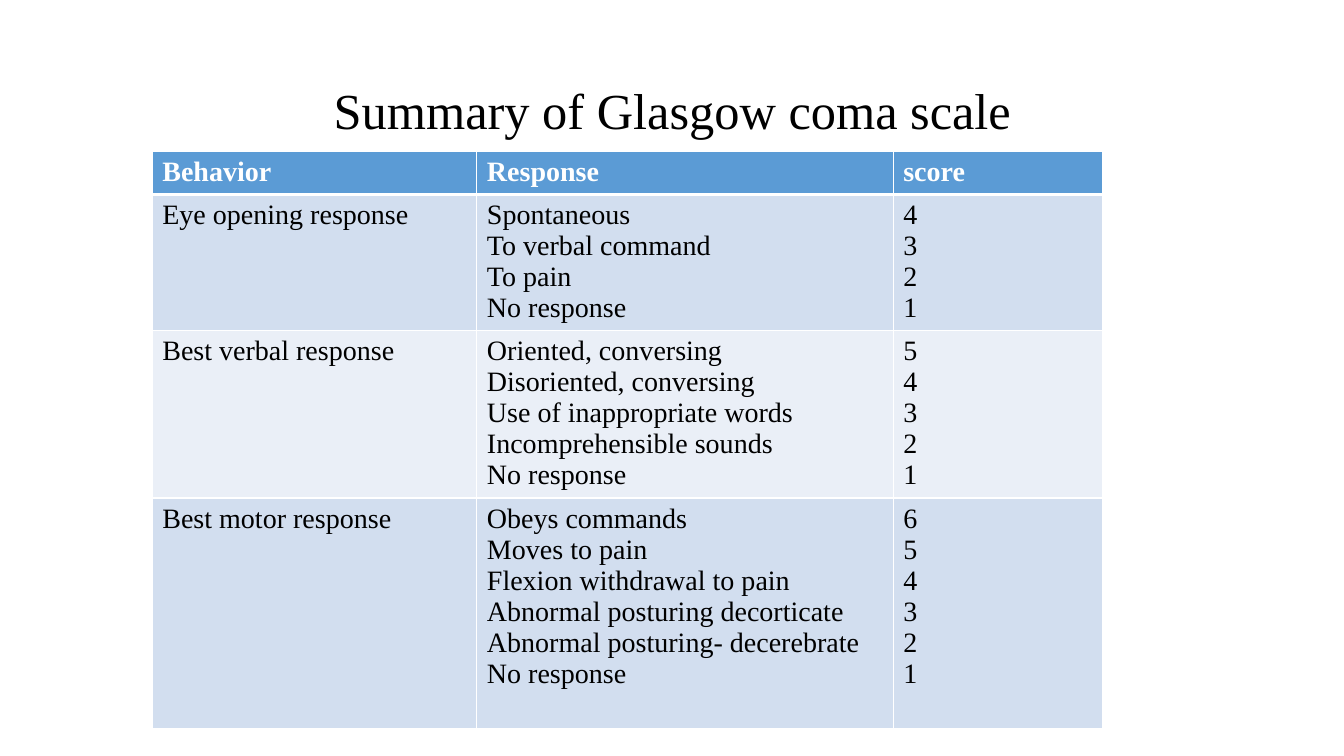
from lxml import etree
from pptx import Presentation
from pptx.dml.color import RGBColor
from pptx.enum.text import MSO_ANCHOR, PP_ALIGN
from pptx.oxml.ns import qn
from pptx.util import Inches, Pt

MIDDLE, CENTER = MSO_ANCHOR.MIDDLE, PP_ALIGN.CENTER
FONT = "Times New Roman"
COLORS = {"header": "5B9BD5", "band_dark": "D2DEEF", "band_light": "EAEFF7",
          "white": "FFFFFF", "black": "000000"}

HEADINGS = ["Behavior", "Response", "score"]
# Responses run from the best to the worst, which scores 1.
SCALE = {
    "Eye opening response": [
        "Spontaneous", "To verbal command", "To pain", "No response"],
    "Best verbal response": [
        "Oriented, conversing", "Disoriented, conversing",
        "Use of inappropriate words", "Incomprehensible sounds", "No response"],
    "Best motor response": [
        "Obeys commands", "Moves to pain", "Flexion withdrawal to pain",
        "Abnormal posturing decorticate", "Abnormal posturing- decerebrate",
        "No response"],
}
COL_WIDTHS = [3.22, 4.13, 2.08]
ROW_HEIGHTS = [0.43, 1.35, 1.66, 2.29]


def write_lines(tf, lines, size=20, color="black", bold=False, align=None, spacing=None):
    """Write each line as a paragraph of its own."""
    for i, line in enumerate(lines):
        p = tf.paragraphs[0] if i == 0 else tf.add_paragraph()
        p.alignment, p.line_spacing = align, spacing
        r = p.add_run()
        r.text = line
        r.font.name, r.font.size, r.font.bold = FONT, Pt(size), bold
        r.font.color.rgb = RGBColor.from_string(COLORS[color])


def set_borders(cell, top=1, bottom=1):
    """Draw white borders; widths are in points."""
    tcPr = cell._tc.get_or_add_tcPr()
    widths = {"lnL": 1, "lnR": 1, "lnT": top, "lnB": bottom}
    for i, (side, width) in enumerate(widths.items()):
        ln = etree.Element(qn(f"a:{side}"), w=str(Pt(width)))
        fill = etree.SubElement(ln, qn("a:solidFill"))
        etree.SubElement(fill, qn("a:srgbClr"), val=COLORS["white"])
        tcPr.insert(i, ln)


def add_title(s, text, left, top, width, height):
    title = s.shapes.title
    title.left, title.top = Inches(left), Inches(top)
    title.width, title.height = Inches(width), Inches(height)
    title.text_frame.vertical_anchor = MIDDLE
    write_lines(title.text_frame, [text], size=36, align=CENTER, spacing=0.9)


def add_scale_table(s, left, top):
    rows = [[[heading] for heading in HEADINGS]]
    for behavior, responses in SCALE.items():
        scores = [str(n) for n in range(len(responses), 0, -1)]
        rows.append([[behavior], responses, scores])

    table = s.shapes.add_table(
        len(rows), len(HEADINGS), Inches(left), Inches(top),
        Inches(sum(COL_WIDTHS)), Inches(sum(ROW_HEIGHTS))).table
    for col, width in zip(table.columns, COL_WIDTHS):
        col.width = Inches(width)
    for row, height in zip(table.rows, ROW_HEIGHTS):
        row.height = Inches(height)

    for i, row in enumerate(rows):
        header = i == 0
        fill = "header" if header else "band_dark" if i % 2 else "band_light"
        for j, lines in enumerate(row):
            cell = table.cell(i, j)
            cell.fill.solid()
            cell.fill.fore_color.rgb = RGBColor.from_string(COLORS[fill])
            set_borders(cell, top=3 if i == 1 else 1, bottom=3 if header else 1)
            write_lines(cell.text_frame, lines,
                        color="white" if header else "black", bold=header)


def main():
    prs = Presentation()
    prs.slide_width, prs.slide_height = Inches(13.33), Inches(7.5)
    s = prs.slides.add_slide(prs.slide_layouts[5])
    add_title(s, "Summary of Glasgow coma scale", 0.92, 0.4, 11.5, 1.45)
    add_scale_table(s, 1.51, 1.5)
    prs.save("out.pptx")


if __name__ == "__main__":
    main()
